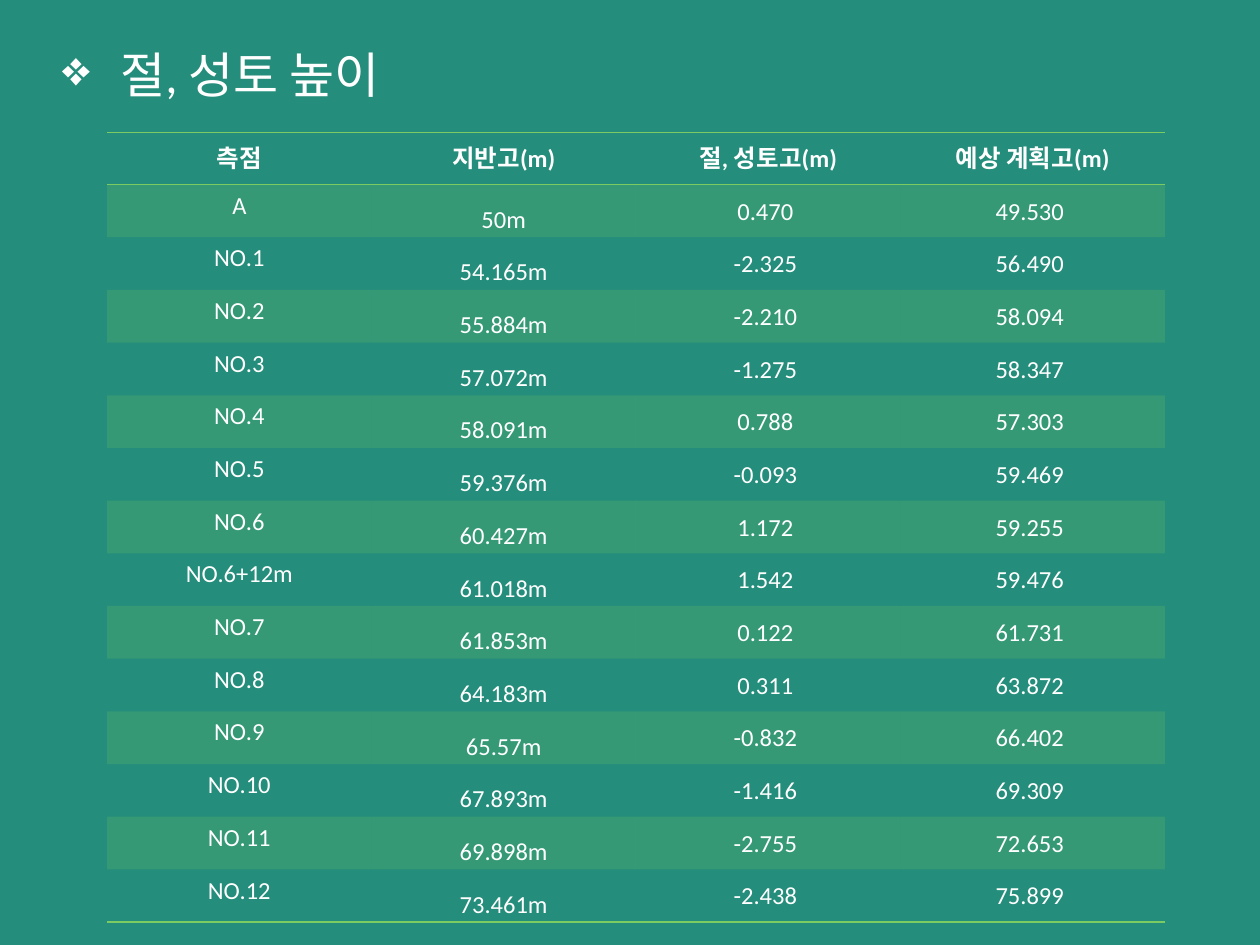
"""Build a slide with a table of cut and fill heights by survey station."""
from lxml import etree
from pptx import Presentation
from pptx import util as u
from pptx.dml.color import RGBColor
from pptx.enum import text
from pptx.oxml import ns

HEADING = " 절, 성토 높이"
COLUMNS = ("측점", "지반고(m)", "절, 성토고(m)", "예상 계획고(m)")
STATIONS = [
    ("A", "50m", "0.470", "49.530"),
    ("NO.1", "54.165m", "-2.325", "56.490"),
    ("NO.2", "55.884m", "-2.210", "58.094"),
    ("NO.3", "57.072m", "-1.275", "58.347"),
    ("NO.4", "58.091m", "0.788", "57.303"),
    ("NO.5", "59.376m", "-0.093", "59.469"),
    ("NO.6", "60.427m", "1.172", "59.255"),
    ("NO.6+12m", "61.018m", "1.542", "59.476"),
    ("NO.7", "61.853m", "0.122", "61.731"),
    ("NO.8", "64.183m", "0.311", "63.872"),
    ("NO.9", "65.57m", "-0.832", "66.402"),
    ("NO.10", "67.893m", "-1.416", "69.309"),
    ("NO.11", "69.898m", "-2.755", "72.653"),
    ("NO.12", "73.461m", "-2.438", "75.899"),
]

TEAL = RGBColor(0x24, 0x8D, 0x7B)
GREEN = RGBColor(0x7C, 0xCA, 0x62)
WHITE = RGBColor(0xFF, 0xFF, 0xFF)
FONT = "Calibri"
BAND_OPACITY = 20
PLAIN_STYLE = "{2D5ABB26-0587-4C30-8999-92F81FD0307C}"
COLUMN_WIDTH = u.Cm(5.33)
ROW_HEIGHT = u.Cm(1.05)
GROUND_INSETS = (u.Cm(0.18), u.Cm(0.05), u.Cm(0.18), u.Cm(0.05))
HEIGHT_INSETS = (u.Cm(0.03), u.Cm(0.03), u.Cm(0.03), 0)


def add_child(parent, tag, **attributes):
    child = etree.SubElement(parent, ns.qn(tag))
    for name, value in attributes.items():
        child.set(name, str(value))
    return child


def style_font(paragraph, size, bold=False):
    font = paragraph.font
    font.name, font.size, font.bold = FONT, u.Pt(size), bold
    font.color.rgb = WHITE


def add_heading(slide):
    title = slide.shapes.title
    title.left, title.top = u.Cm(1), u.Cm(0.63)
    title.width, title.height = u.Cm(21.33), u.Cm(1.7)
    frame = title.text_frame
    frame.text = HEADING
    frame.auto_size = text.MSO_AUTO_SIZE.NONE
    frame.vertical_anchor = text.MSO_ANCHOR.MIDDLE
    paragraph = frame.paragraphs[0]
    paragraph.alignment = text.PP_ALIGN.LEFT
    paragraph.space_before = u.Pt(4)
    style_font(paragraph, 28)
    properties = paragraph.font._element.getparent()
    indent = u.Cm(0.95)
    properties.set("marL", str(indent))
    properties.set("indent", str(-indent))
    bullet = add_child(properties, "a:buChar", char="❖")
    properties.remove(bullet)
    paragraph.font._element.addprevious(bullet)


def draw_borders(cell, sides):
    properties = cell._tc.get_or_add_tcPr()
    for side in sides:
        line = add_child(properties, f"a:ln{side}", w=u.Pt(1))
        fill = add_child(line, "a:solidFill")
        add_child(fill, "a:srgbClr", val=GREEN)


def fill_cell(cell, banded):
    if not banded:
        cell.fill.background()
        return
    cell.fill.solid()
    cell.fill.fore_color.rgb = GREEN
    color = cell._tc.tcPr.find(".//" + ns.qn("a:srgbClr"))
    add_child(color, "a:alpha", val=BAND_OPACITY * 1000)


def write_cell(cell, content, row, column):
    is_header = row == 0
    is_height = not is_header and column > 1
    cell.text = f"{content} " if is_height else content
    paragraph = cell.text_frame.paragraphs[0]
    paragraph.alignment = text.PP_ALIGN.CENTER
    style_font(paragraph, 14, bold=is_header)
    if is_header or column == 0:
        return
    cell.vertical_anchor = text.MSO_ANCHOR.MIDDLE
    insets = HEIGHT_INSETS if is_height else GROUND_INSETS
    cell.margin_left, cell.margin_top, cell.margin_right, cell.margin_bottom = insets
    if not is_height:
        paragraph.line_spacing = 1.6


def add_station_table(slide):
    rows = [COLUMNS, *STATIONS]
    last = len(rows) - 1
    table = slide.shapes.add_table(
        len(rows), len(COLUMNS), u.Cm(2.16), u.Cm(2.67),
        COLUMN_WIDTH * len(COLUMNS), ROW_HEIGHT * len(rows)).table
    table.horz_banding = False
    table._tbl.tblPr.find(ns.qn("a:tableStyleId")).text = PLAIN_STYLE
    borders = {0: "TB", last: "B"}
    for row, contents in enumerate(rows):
        table.rows[row].height = ROW_HEIGHT
        for column, content in enumerate(contents):
            cell = table.cell(row, column)
            write_cell(cell, content, row, column)
            draw_borders(cell, borders.get(row, ""))
            fill_cell(cell, banded=row % 2 == 1)


def main():
    deck = Presentation()
    deck.slide_width, deck.slide_height = u.Cm(25.4), u.Cm(19.05)
    slide = deck.slides.add_slide(deck.slide_layouts.get_by_name("Title Only"))
    slide.background.fill.solid()
    slide.background.fill.fore_color.rgb = TEAL
    add_heading(slide)
    add_station_table(slide)
    deck.save("out.pptx")


if __name__ == "__main__":
    main()
